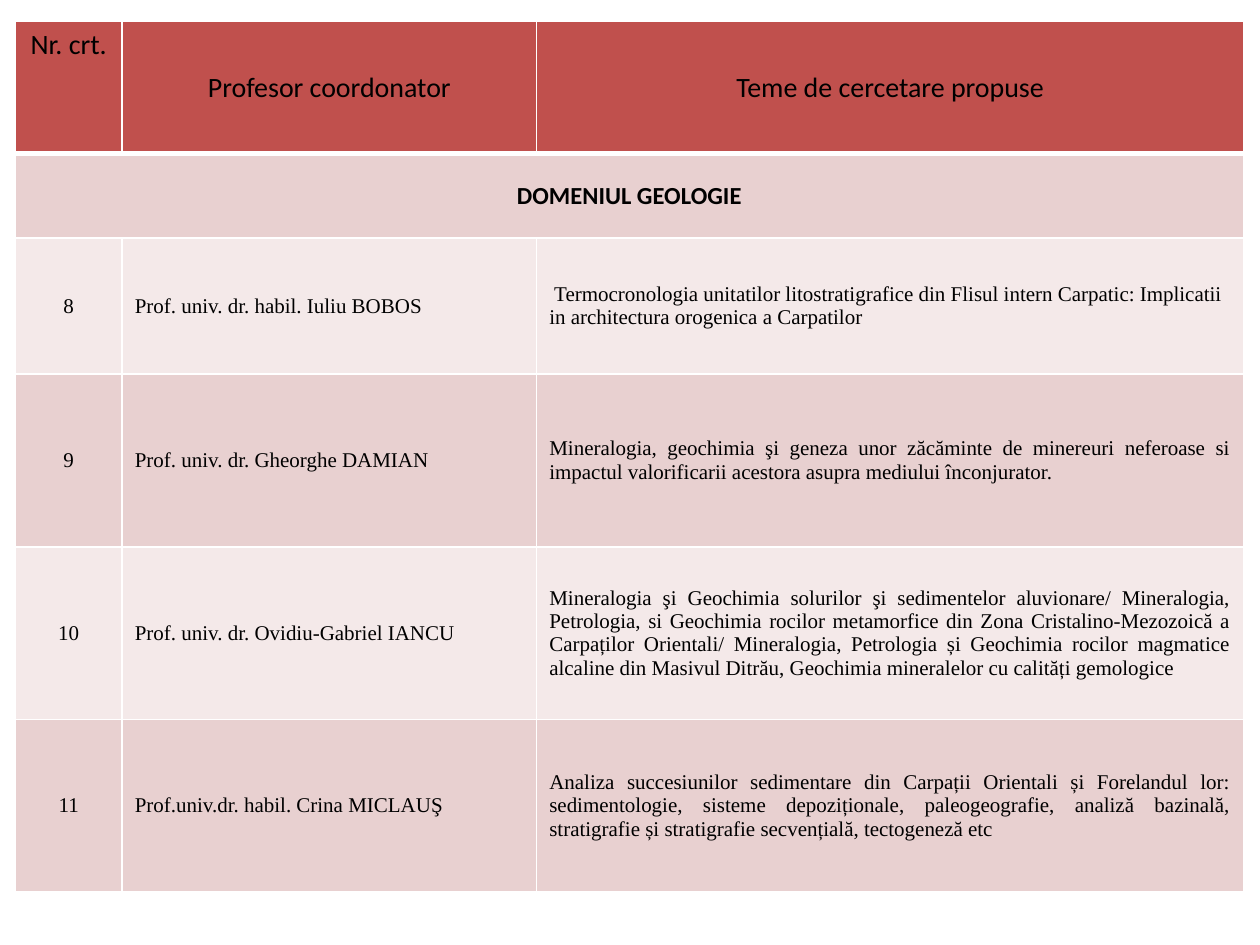
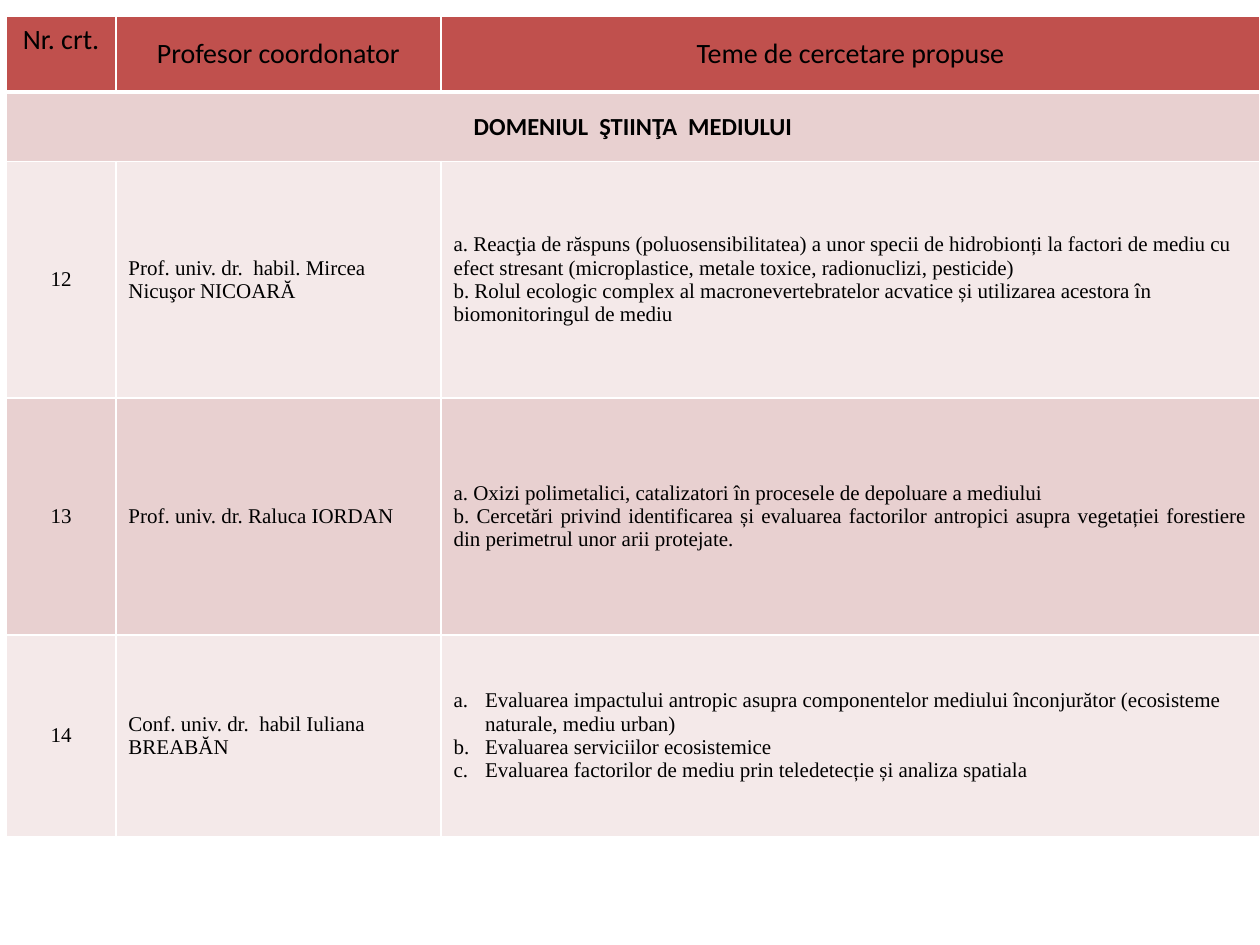
import lxml.etree
import pptx
import pptx.dml.color
import pptx.enum.text
import pptx.oxml.ns
import pptx.util

Inches = pptx.util.Inches
Pt = pptx.util.Pt
qn = pptx.oxml.ns.qn
ALIGN = pptx.enum.text.PP_ALIGN
ANCHOR = pptx.enum.text.MSO_ANCHOR

COLOURS = {
    "header": "C0504D",
    "dark_band": "E8D0D0",
    "light_band": "F4E9E9",
    "rule": "FFFFFF",
    "text": "000000",
}
HEADINGS = ["Nr. crt.", "Profesor coordonator", "Teme de cercetare propuse"]

GEOLOGY = [
    ("8", "Prof. univ. dr. habil. Iuliu BOBOS",
     [" Termocronologia unitatilor litostratigrafice din Flisul intern Carpatic: "
      "Implicatii in architectura orogenica a Carpatilor"], {}),
    ("9", "Prof. univ. dr. Gheorghe DAMIAN",
     ["Mineralogia, geochimia şi geneza unor zăcăminte de minereuri neferoase si "
      "impactul valorificarii acestora asupra mediului înconjurator."],
     {"align": ALIGN.JUSTIFY}),
    ("10", "Prof. univ. dr. Ovidiu-Gabriel IANCU",
     ["Mineralogia şi Geochimia solurilor şi sedimentelor aluvionare/ Mineralogia, "
      "Petrologia, si Geochimia rocilor metamorfice din Zona Cristalino-Mezozoică a "
      "Carpaților Orientali/ Mineralogia, Petrologia și Geochimia rocilor magmatice "
      "alcaline din Masivul Ditrău, Geochimia mineralelor cu calități gemologice"],
     {"align": ALIGN.JUSTIFY}),
    ("11", "Prof.univ.dr. habil. Crina MICLAUŞ",
     ["Analiza succesiunilor sedimentare din Carpații Orientali și Forelandul lor: "
      "sedimentologie, sisteme depoziționale, paleogeografie, analiză bazinală, "
      "stratigrafie și stratigrafie secvențială, tectogeneză etc"],
     {"align": ALIGN.JUSTIFY, "space_after": 10}),
]
ENVIRONMENT = [
    ("12", "Prof. univ. dr.  habil. Mircea Nicuşor NICOARĂ",
     ["a. Reacţia de răspuns (poluosensibilitatea) a unor specii de hidrobionți la "
      "factori de mediu cu efect stresant (microplastice, metale toxice, radionuclizi, "
      "pesticide)",
      "b. Rolul ecologic complex al macronevertebratelor acvatice și utilizarea "
      "acestora în biomonitoringul de mediu"], {}),
    ("13", "Prof. univ. dr. Raluca IORDAN",
     ["a. Oxizi polimetalici, catalizatori în procesele de depoluare a mediului",
      "b. Cercetări privind identificarea și evaluarea factorilor antropici asupra "
      "vegetației forestiere din perimetrul unor arii protejate."],
     {"align": ALIGN.JUSTIFY}),
    ("14", "Conf. univ. dr.  habil Iuliana BREABĂN",
     ["Evaluarea impactului antropic asupra componentelor mediului înconjurător "
      "(ecosisteme naturale, mediu urban)",
      "Evaluarea serviciilor ecosistemice",
      "Evaluarea factorilor de mediu prin teledetecție și analiza spatiala"],
     {"lettered": True}),
]


def colour(name):
    """Return the named palette colour."""
    return pptx.dml.color.RGBColor.from_string(COLOURS[name])


def set_borders(cell, bottom):
    """Rule all four sides of a cell, with its own bottom width in points."""
    properties = cell._tc.get_or_add_tcPr()
    for side, width in (("L", 1), ("R", 1), ("T", 1), ("B", bottom)):
        line = lxml.etree.SubElement(properties, qn(f"a:ln{side}"), w=str(Pt(width)))
        fill = lxml.etree.SubElement(line, qn("a:solidFill"))
        lxml.etree.SubElement(fill, qn("a:srgbClr"), val=COLOURS["rule"])


def style_cell(cell, band, bottom=1):
    """Give a cell its borders, then its band colour."""
    set_borders(cell, bottom)
    cell.fill.solid()
    cell.fill.fore_color.rgb = colour(band)


def add_letter(paragraph):
    """Number a paragraph a., b., c. with a hanging indent."""
    properties = paragraph._p.get_or_add_pPr()
    properties.set("marL", str(Inches(0.25)))
    properties.set("indent", str(Inches(-0.25)))
    lettering = properties.makeelement(qn("a:buAutoNum"), {"type": "alphaLcPeriod"})
    properties.insert(0, lettering)


def write_cell(cell, lines, size=12, font="Times New Roman", bold=False,
               align=ALIGN.LEFT, anchor=ANCHOR.MIDDLE, space_after=0, lettered=False):
    """Write one paragraph per line into a cell."""
    cell.vertical_anchor = anchor
    cell.text = "\n".join(lines)
    for paragraph in cell.text_frame.paragraphs:
        paragraph.alignment = align
        if lettered:
            add_letter(paragraph)
        if space_after:
            paragraph.space_after = Pt(space_after)
        paragraph.font.size = Pt(size)
        paragraph.font.name = font
        paragraph.font.bold = bold
        paragraph.font.color.rgb = colour("text")


def write_headings(table):
    """Fill the heading row."""
    for column, heading in enumerate(HEADINGS):
        cell = table.cell(0, column)
        style_cell(cell, "header", bottom=3)
        write_cell(cell, [heading], 16, "Calibri", align=ALIGN.CENTER,
                   anchor=ANCHOR.MIDDLE if column else ANCHOR.TOP)


def write_domain(table, domain):
    """Fill the row that names the domain across all columns."""
    for column in range(len(HEADINGS)):
        style_cell(table.cell(1, column), "dark_band")
    table.cell(1, 0).merge(table.cell(1, len(HEADINGS) - 1))
    write_cell(table.cell(1, 0), [domain], 14, "Calibri", True, ALIGN.CENTER)


def write_professors(table, professors):
    """Fill one banded row for each professor."""
    for row, (number, professor, themes, theme_style) in enumerate(professors, start=2):
        for column in range(len(HEADINGS)):
            style_cell(table.cell(row, column), "dark_band" if row % 2 else "light_band")
        write_cell(table.cell(row, 0), [number], align=ALIGN.CENTER)
        write_cell(table.cell(row, 1), [professor])
        write_cell(table.cell(row, 2), themes, **theme_style)


def add_domain_slide(deck, domain, professors, left, top, widths, heights):
    """Add a slide with the table of one domain."""
    slide = deck.slides.add_slide(deck.slide_layouts[6])
    table = slide.shapes.add_table(
        len(heights), len(widths), Inches(left), Inches(top),
        Inches(sum(widths)), Inches(sum(heights))).table
    for column, width in zip(table.columns, widths):
        column.width = Inches(width)
    for row, height in zip(table.rows, heights):
        row.height = Inches(height)
    write_headings(table)
    write_domain(table, domain)
    write_professors(table, professors)


def main():
    """Build and save the deck."""
    deck = pptx.Presentation()
    deck.slide_width, deck.slide_height = Inches(10), Inches(7.5)
    add_domain_slide(deck, "DOMENIUL GEOLOGIE", GEOLOGY, 0.12, 0.17,
                     [0.85, 3.29, 5.61], [1.05, 0.67, 1.08] + [1.37] * 3)
    add_domain_slide(deck, "DOMENIUL  ŞTIINŢA  MEDIULUI", ENVIRONMENT, 0.05, 0.13,
                     [0.87, 2.58, 6.5], [0.6, 0.55, 1.88, 1.88, 1.6])
    deck.save("out.pptx")


if __name__ == "__main__":
    main()
